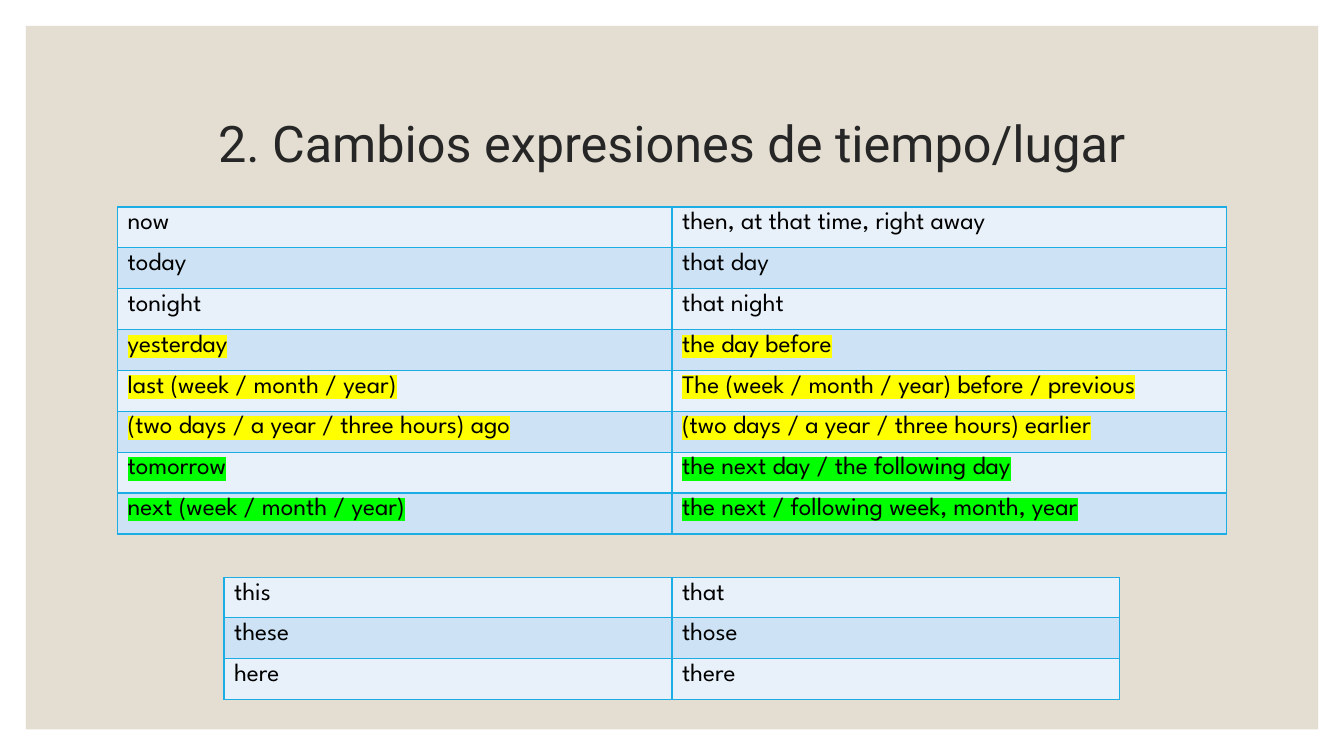
"""Build a slide with two tables of time and place changes in reported speech."""
from lxml import etree
from pptx import Presentation
from pptx.dml.color import RGBColor
from pptx.enum import shapes, text
from pptx.oxml import ns
from pptx.util import Pt

HUES = {
    "sand": "E3DED1", "ink": "262626", "black": "000000", "line": "1CADE4",
    "pale": "E8F1FA", "blue": "CDE3F5", "yellow": "FFFF00", "green": "00FF00",
}


def write(frame, words, size=18, font="League Spartan", hue="black", mark=None,
          align=text.PP_ALIGN.LEFT, space=None):
    para = frame.paragraphs[0]
    para.alignment = align
    para.line_spacing = space
    run = para.add_run()
    run.text = words
    run.font.size = Pt(size)
    run.font.name = font
    run.font.color.rgb = RGBColor.from_string(HUES[hue])
    if mark:
        light = etree.Element(ns.qn("a:highlight"))
        etree.SubElement(light, ns.qn("a:srgbClr"), val=HUES[mark])
        run.font._element.find(ns.qn("a:solidFill")).addnext(light)


def edge(cell):
    props = cell._tc.get_or_add_tcPr()
    for spot, side in enumerate(("lnL", "lnR", "lnT", "lnB")):
        line = etree.Element(ns.qn("a:" + side), w=str(Pt(1)))
        fill = etree.SubElement(line, ns.qn("a:solidFill"))
        etree.SubElement(fill, ns.qn("a:srgbClr"), val=HUES["line"])
        props.insert(spot, line)


deck = Presentation()
deck.slide_width, deck.slide_height = Pt(960), Pt(540)
slide = deck.slides.add_slide(deck.slide_layouts[6])

panel = slide.shapes.add_shape(
    shapes.MSO_SHAPE.RECTANGLE, Pt(18.5), Pt(18.5), Pt(923), Pt(502.5))
panel.shadow.inherit = False
panel.fill.solid()
panel.fill.fore_color.rgb = RGBColor.from_string(HUES["sand"])
panel.line.fill.background()

title = slide.shapes.add_textbox(Pt(84), Pt(50.4), Pt(792), Pt(108)).text_frame
title.word_wrap = True
title.vertical_anchor = text.MSO_ANCHOR.MIDDLE
write(title, "2. Cambios expresiones de tiempo/lugar", size=36, font="Roboto",
      hue="ink", align=text.PP_ALIGN.CENTER, space=0.9)

times = [
    ("now", "then, at that time, right away", None),
    ("today", "that day", None),
    ("tonight", "that night", None),
    ("yesterday", "the day before", "yellow"),
    ("last (week / month / year)", "The (week / month / year) before / previous", "yellow"),
    ("(two days / a year / three hours) ago",
     "(two days / a year / three hours) earlier", "yellow"),
    ("tomorrow", "the next day / the following day", "green"),
    ("next (week / month / year)", "the next / following week, month, year", "green"),
]
places = [("this", "that", None), ("these", "those", None), ("here", "there", None)]

for rows, left, top, width, first in (
    (times, 84, 147.8, 792, 29.2),
    (places, 160, 412.4, 640, 24),
):
    highs = [first] + [29.2] * (len(rows) - 1)
    grid = slide.shapes.add_table(
        len(rows), 2, Pt(left), Pt(top), Pt(width), Pt(sum(highs))).table
    grid.first_row = grid.horz_banding = False
    for r, (now, then, mark) in enumerate(rows):
        grid.rows[r].height = Pt(highs[r])
        for c, words in enumerate((now, then)):
            cell = grid.cell(r, c)
            cell.fill.solid()
            cell.fill.fore_color.rgb = RGBColor.from_string(HUES[("pale", "blue")[r % 2]])
            edge(cell)
            write(cell.text_frame, words, mark=mark)

deck.save("out.pptx")
